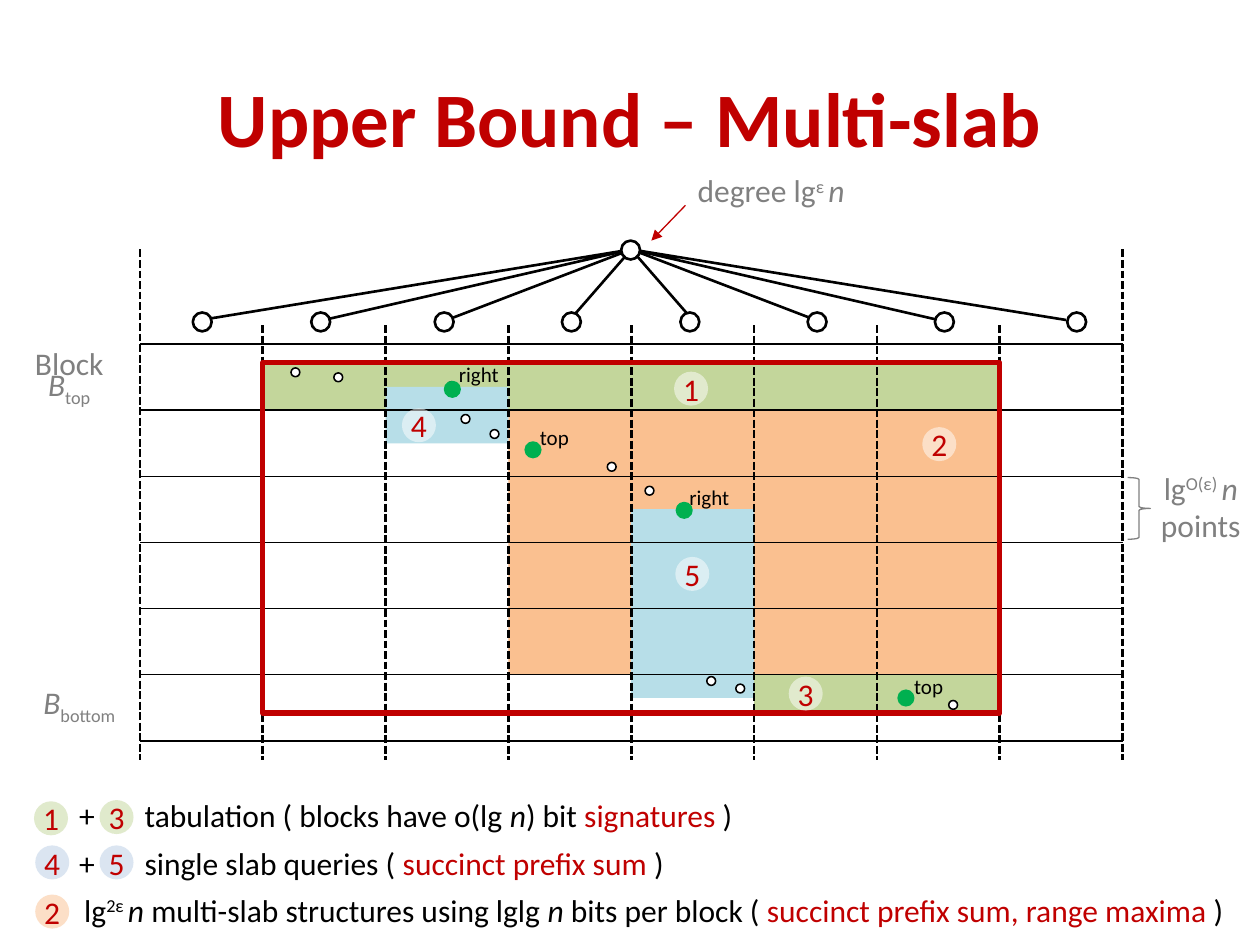
from typing import NamedTuple

from lxml.etree import SubElement as Sub
from pptx import Presentation
from pptx.dml.color import RGBColor as Rgb
from pptx.enum.dml import MSO_LINE as Dash
from pptx.enum.shapes import MSO_CONNECTOR as Link, MSO_SHAPE as Kind
from pptx.enum.text import MSO_ANCHOR as Anchor, PP_ALIGN as Align
from pptx.oxml.ns import qn
from pptx.util import Inches, Pt

COLORS = {
    "black": "000000", "white": "FFFFFF", "red": "C00000", "gray": "808080",
    "green": "C3D69B", "blue": "B7DEE8", "pale": "B9CDE5",
    "orange": "FAC090", "dot": "00B050",
}


class Box(NamedTuple):
    x: float
    y: float
    w: float
    h: float


class Bit(NamedTuple):
    text: str
    italic: bool = False
    base: int = 0
    color: str = ""


class Label(NamedTuple):
    box: Box
    rows: list[list[Bit]]
    color: str = "gray"
    size: float = 18
    align: Align = Align.CENTER
    pitch: float = 0
    tab: float = 0


class Badge(NamedTuple):
    text: str
    x: float
    y: float
    color: str = "white"


def rgb(name: str) -> Rgb:
    return Rgb.from_string(COLORS[name])


def shape(kind: Kind, box: Box, fill: str = "", line: str = "", width: float = 1):
    item = slide.shapes.add_shape(kind, *map(Inches, box))
    paint(item, fill, line, width)
    return item


def paint(item, fill: str, line: str, width: float) -> None:
    item.shadow.inherit = False
    if fill:
        item.fill.solid()
        item.fill.fore_color.rgb = rgb(fill)
    else:
        item.fill.background()
    if line:
        item.line.color.rgb = rgb(line)
        item.line.width = Pt(width)
    else:
        item.line.fill.background()


def link(x1: float, y1: float, x2: float, y2: float, color: str, width: float):
    item = slide.shapes.add_connector(Link.STRAIGHT, *map(Inches, (x1, y1, x2, y2)))
    item.line.color.rgb = rgb(color)
    item.line.width = Pt(width)
    Sub(item._element.spPr, qn("a:effectLst"))
    return item


def style(run, size: float, color: str, bold: bool = False) -> None:
    run.font.name = "Calibri"
    run.font.size = Pt(size)
    run.font.bold = bold
    run.font.color.rgb = rgb(color)


def label(spec: Label) -> None:
    frame = slide.shapes.add_textbox(*map(Inches, spec.box)).text_frame
    frame.word_wrap = True
    for i, row in enumerate(spec.rows):
        para = frame.add_paragraph() if i else frame.paragraphs[0]
        para.alignment = spec.align
        if spec.pitch:
            para.line_spacing = Pt(spec.pitch)
        if spec.tab:
            stops = Sub(para._p.get_or_add_pPr(), qn("a:tabLst"))
            Sub(stops, qn("a:tab"), pos=str(Inches(spec.tab)), algn="l")
        for bit in row:
            run = para.add_run()
            run.text = bit.text
            style(run, spec.size, bit.color or spec.color)
            run.font.italic = bit.italic
            if bit.base:
                run._r.get_or_add_rPr().set("baseline", str(bit.base * 1000))


def badge(spec: Badge) -> None:
    item = shape(Kind.OVAL, Box(spec.x, spec.y, 0.27, 0.27), spec.color)
    shade = item._element.spPr.find(qn("a:solidFill"))
    Sub(shade[0], qn("a:alpha"), val="50000")
    frame = item.text_frame
    frame.margin_left = frame.margin_right = frame.margin_top = frame.margin_bottom = 0
    frame.vertical_anchor = Anchor.MIDDLE
    frame.text = spec.text
    frame.paragraphs[0].alignment = Align.CENTER
    style(frame.paragraphs[0].runs[0], 18, "red")


deck = Presentation()
deck.slide_width, deck.slide_height = Inches(10), Inches(7.5)
slide = deck.slides.add_slide(deck.slide_layouts[6])

# Grid of slabs and blocks
LEFT, TOP, STEP, ROW = 1.11, 2.73, 0.975, 0.525
cols = [LEFT + STEP * i for i in range(9)]
rows = [TOP + ROW * i for i in range(7)]

# Title
head = slide.shapes.add_textbox(*map(Inches, (0.5, 0.3, 9, 1.25))).text_frame
head.word_wrap = True
head.vertical_anchor = Anchor.MIDDLE
head.text = "Upper Bound – Multi-slab"
head.paragraphs[0].alignment = Align.CENTER
style(head.paragraphs[0].runs[0], 44, "red", True)

# Query areas: first and last column line, top, bottom, colour
for a, b, y1, y2, color in [
    (3, 7, rows[1], rows[5], "orange"), (1, 7, 2.88, rows[1], "green"),
    (4, 5, 4.04, 5.54, "blue"), (5, 7, rows[5], 5.66, "green"),
    (2, 3, 3.07, 3.52, "blue"),
]:
    shape(Kind.RECTANGLE, Box(cols[a], y1, cols[b] - cols[a], y2 - y1), color)

# Points
for x, y in [
    (5.39, 4.01), (4.19, 3.52), (7.15, 5.51), (5.61, 5.37), (5.84, 5.43),
    (3.55, 3.03), (7.53, 5.56), (3.89, 3.41), (2.31, 2.92), (2.65, 2.96),
    (4.82, 3.67), (5.12, 3.86), (3.66, 3.29),
]:
    shape(Kind.OVAL, Box(x, y, 0.07, 0.07), "white", "black", 0.88)

# Block and slab lines
for y in rows:
    link(cols[-1], y, cols[0], y, "black", 0.88)
for i, x in enumerate(cols):
    start = 1.98 if i in (0, 8) else 2.58
    link(x, start, x, 6.03, "black", 1.5).line.dash_style = Dash.SQUARE_DOT

# Tree: each outline joins two leaves through the root
root = (Inches(cols[4]), Inches(1.98))
tips = [x + STEP / 2 for x in cols[:7]] + [8.46]
for a, b in zip(tips[::2], tips[1::2]):
    pen = slide.shapes.build_freeform(Inches(a), Inches(2.54))
    pen.add_line_segments([root, (Inches(b), Inches(2.54))], close=False)
    paint(pen.convert_to_shape(), "", "black", 1.5)
nodes = [(x, 2.48) for x in (1.53, 2.47, 3.45, 4.46, 5.4, 6.41, 7.42, 8.47)]
for x, y in nodes + [(4.93, 1.91)]:
    shape(Kind.OVAL, Box(x, y, 0.15, 0.15), "white", "black", 1.5)

# Query frame, brace and arrow
shape(Kind.RECTANGLE, Box(cols[1], 2.88, STEP * 6, 2.78), "", "red", 3)
shape(Kind.RIGHT_BRACE, Box(8.95, 3.79, 0.18, 0.49), "", "gray", 0.75)
arrow = link(5.44, 1.63, 5.17, 1.91, "red", 0.75)
Sub(arrow.line._get_or_add_ln(), qn("a:tailEnd"), type="triangle")

# Gray labels
N = Bit("n", True)
for spec in [
    Label(Box(8.86, 3.67, 1.34, 0.71),
          [[Bit("lg"), Bit("O(ε) ", base=30), N], [Bit("points")]]),
    Label(Box(-0.12, 2.77, 1.34, 0.54),
          [[Bit("Block")], [Bit("B", True), Bit("top", base=-25)]], pitch=15),
    Label(Box(-0.04, 5.37, 1.34, 0.4), [[Bit("B", True), Bit("bottom", base=-25)]]),
    Label(Box(5.37, 1.31, 1.5, 0.4), [[Bit("degree lg"), Bit("ε ", base=30), N]]),
]:
    label(spec)

# Extreme points and their labels
for text, x, y in [("right", 3.48, 2.82), ("right", 5.31, 3.8),
                   ("top", 4.08, 3.32), ("top", 7.05, 5.3)]:
    label(Label(Box(x, y, 0.64, 0.3), [[Bit(text)]], "black", 12))
for x, y in [(3.53, 3.03), (4.17, 3.51), (5.37, 3.99), (7.13, 5.48)]:
    shape(Kind.OVAL, Box(x, y, 0.12, 0.12), "dot", "dot", 1.13)

# Area numbers, in the grid and in the legend
for spec in [
    Badge("1", 5.35, 2.95), Badge("2", 7.32, 3.39), Badge("3", 6.26, 5.37),
    Badge("4", 3.19, 3.24), Badge("5", 5.36, 4.42),
    Badge("1", 0.27, 6.36, "green"), Badge("3", 0.79, 6.35, "green"),
    Badge("4", 0.28, 6.71, "pale"), Badge("5", 0.79, 6.71, "pale"),
    Badge("2", 0.28, 7.1, "orange"),
]:
    badge(spec)

# Legend
for box, bits in [
    (Box(0.53, 6.27, 5.44, 0.4),
     [Bit("+\ttabulation ( blocks have o(lg "), N, Bit(") bit "),
      Bit("signatures", color="red"), Bit(" )")]),
    (Box(0.53, 6.65, 5.44, 0.4),
     [Bit("+\tsingle slab queries ( "),
      Bit("succinct prefix sum ", color="red"), Bit(")")]),
    (Box(0.57, 7.02, 9.47, 0.4),
     [Bit("lg"), Bit("2ε ", base=30), Bit("n ", True),
      Bit("multi-slab structures using lglg "), N, Bit(" bits per block ( "),
      Bit("succinct prefix sum, range maxima ", color="red"), Bit(")")]),
]:
    label(Label(box, [bits], "black", align=Align.LEFT, tab=0.52))

deck.save("out.pptx")
